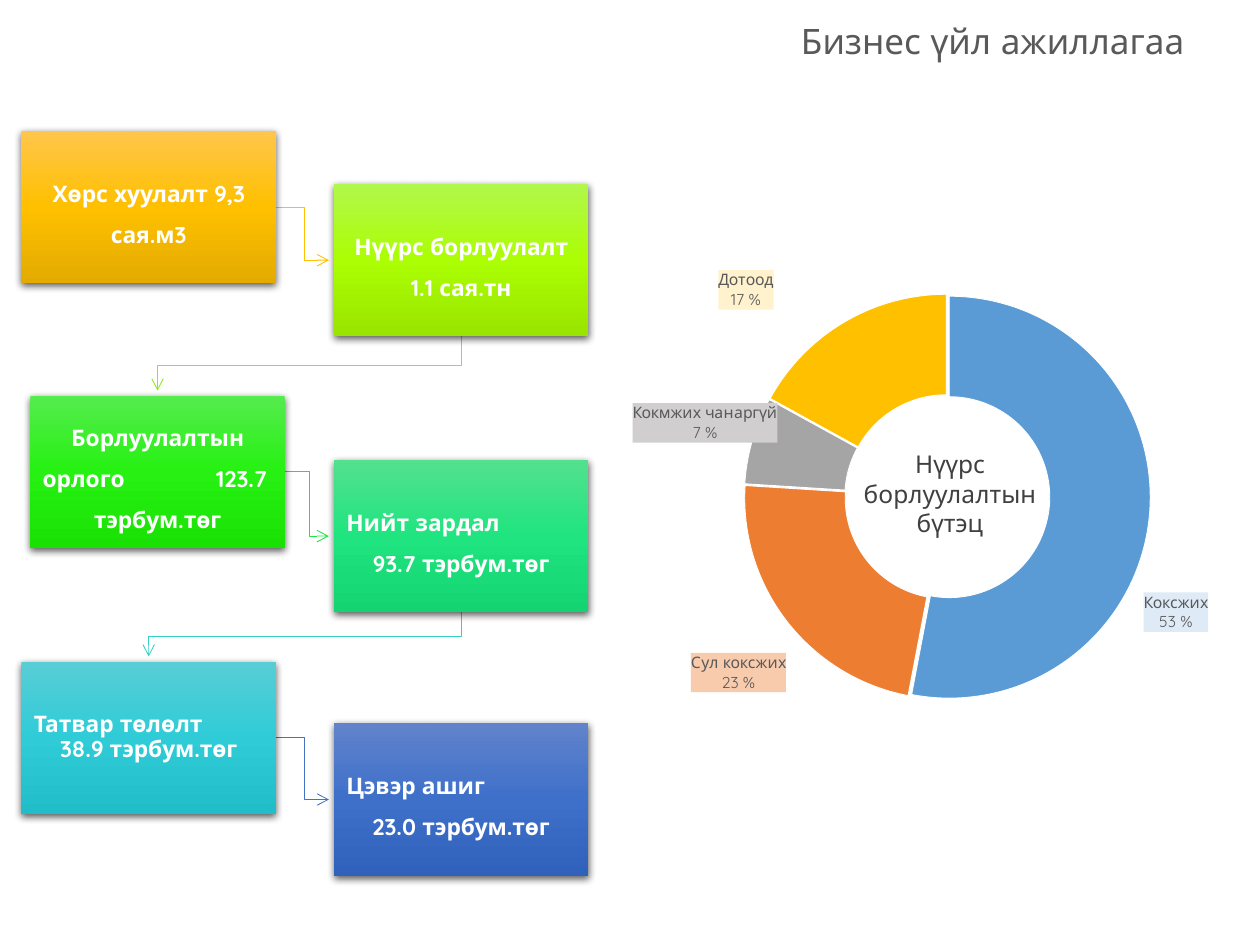
from copy import deepcopy

from lxml.etree import SubElement
from pptx import Presentation
from pptx.chart.data import CategoryChartData
from pptx.dml.color import RGBColor
from pptx.enum.chart import XL_CHART_TYPE as ChartType
from pptx.enum.shapes import MSO_SHAPE as Preset
from pptx.enum.text import MSO_ANCHOR as Anchor, PP_ALIGN as Align
from pptx.oxml import parse_xml
from pptx.oxml.ns import nsdecls, qn
from pptx.util import Inches, Pt

FONT = "Quicksand"
TITLE = "Бизнес үйл ажиллагаа"
RING_TITLE = "Нүүрс борлуулалтын бүтэц"
CARD_W, CARD_H = 2.02, 1.21
ARROW_GAP = 0.04

# left, top, gradient, line spacing, lines with their alignment
CARDS = [
    (0.17, 1.04, ("FFC64B", "FFC000", "E3AB00"), 1.5,
     [("Хөрс хуулалт 9,3 сая.м3", Align.CENTER)]),
    (2.65, 1.46, ("B1F74C", "ABFE03", "99E400"), 1.5,
     [("Нүүрс борлуулалт 1.1 сая.тн", Align.CENTER)]),
    (0.24, 3.14, ("55EC4E", "26F112", "19E104"), 1.5,
     [("Борлуулалтын", Align.CENTER), ("орлого\t123.7", Align.LEFT),
      ("тэрбум.төг", Align.CENTER)]),
    (2.65, 3.65, ("53E18E", "20E47F", "13D471"), 1.5,
     [("Нийт зардал", Align.LEFT), ("93.7 тэрбум.төг", Align.CENTER)]),
    (0.17, 5.25, ("59CDD6", "2FCCD7", "21BDC8"), 0.9,
     [("Татвар төлөлт", Align.LEFT), ("38.9 тэрбум.төг", Align.CENTER)]),
    (2.65, 5.74, ("6183CB", "3E70CA", "3062BB"), 1.5,
     [("Цэвэр ашиг", Align.LEFT), ("23.0 тэрбум.төг", Align.CENTER)]),
]
ARROW_COLORS = ["FFC000", "86F011", "23E148", "33D2C5", "4472C4"]

# category, percent, colour, label fill, label offset
SALES = [
    ("Коксжих", 53, "5B9BD5", "DEEBF7", (0.13, 0.16)),
    ("Сул коксжих", 23, "ED7D31", "F8CBAD", (-0.15, 0.13)),
    ("Кокмжих чанаргүй", 7, "A5A5A5", "D0CECE", (-0.17, -0.05)),
    ("Дотоод", 17, "FFC000", "FFF2CC", (-0.21, -0.12)),
]


def rgb(color):
    """Turn a hex string into a colour."""
    return RGBColor.from_string(color)


def style(paragraph, size, color, align, spacing=None, bold=False):
    """Format one paragraph."""
    font = paragraph.font
    font.name, font.size, font.bold = FONT, Pt(size), bold
    font.color.rgb = rgb(color)
    paragraph.alignment = align
    if spacing:
        paragraph.line_spacing = spacing


def add_title(slide):
    """Fill and place the title placeholder."""
    title = slide.shapes.title
    title.left, title.top, title.width, title.height = map(Inches, (5.75, 0.08, 3.75, 0.52))
    title.text_frame.text = TITLE
    title.text_frame.vertical_anchor = Anchor.MIDDLE
    style(title.text_frame.paragraphs[0], 20, "595959", Align.RIGHT, 0.9)


def manual_layout(x, y, size=None):
    """Build a chart layout element."""
    parts = [("x", x), ("y", y)]
    if size:
        parts = [("layoutTarget", "inner"), ("xMode", "edge"), ("yMode", "edge"),
                 *parts, ("w", size[0]), ("h", size[1])]
    layout = parse_xml(f"<c:layout {nsdecls('c')}><c:manualLayout/></c:layout>")
    for tag, value in parts:
        SubElement(layout[0], qn(f"c:{tag}")).set("val", str(value))
    return layout


def add_label(point, text, fill, offset):
    """Give a slice its label on a tinted ground."""
    frame = point.data_label.text_frame
    frame.text = text
    frame.word_wrap = False
    for paragraph in frame.paragraphs:
        style(paragraph, 9, "595959", Align.CENTER)
    label_text = frame.paragraphs[0]._p.getparent().getparent()
    label_text.addprevious(manual_layout(*offset))
    label_text.addnext(parse_xml(
        f"<c:spPr {nsdecls('c', 'a')}><a:solidFill><a:srgbClr val='{fill}'/>"
        "</a:solidFill><a:ln><a:noFill/></a:ln></c:spPr>"))


def add_sales_ring(slide):
    """Draw the doughnut of coal sales with its centre title."""
    data = CategoryChartData()
    data.categories = [sale[0] for sale in SALES]
    data.add_series(RING_TITLE, [sale[1] for sale in SALES])
    box = map(Inches, (5.02, 1.17, 4.67, 5))
    chart = slide.shapes.add_chart(ChartType.DOUGHNUT, *box, data).chart
    chart.has_legend = chart.has_title = False
    chart.font.name, chart.font.size = "Calibri", Pt(10)
    chart.font.color.rgb = rgb("000000")
    plot = chart.plots[0]
    plot.vary_by_categories = True
    series = plot.series[0]
    for index, (category, percent, color, fill, offset) in enumerate(SALES):
        point = series.points[index]
        point.format.fill.solid()
        point.format.fill.fore_color.rgb = rgb(color)
        point.format.line.color.rgb = rgb("FFFFFF")
        point.format.line.width = Pt(0.5)
        add_label(point, f"{category}\n{percent} %", fill, offset)
    first_point = series._element.find(qn("c:dPt"))
    first_point.addprevious(parse_xml(f"<c:explosion {nsdecls('c')} val='2'/>"))
    ring = plot._element
    for leader in ring.iter(qn("c:showLeaderLines")):
        leader.set("val", "0")
    ring.find(qn("c:holeSize")).set("val", "53")
    area = ring.getparent()
    for old in area.findall(qn("c:layout")):
        area.remove(old)
    area.insert(0, manual_layout(0.19, 0.22, (0.69, 0.67)))

    center = slide.shapes.add_shape(Preset.OVAL, *map(Inches, (6.33, 2.67, 2.42, 2.49)))
    center.shadow.inherit = False
    center.fill.background()
    center.line.fill.background()
    center.text_frame.word_wrap = True
    center.text_frame.text = RING_TITLE
    center.text_frame.vertical_anchor = Anchor.MIDDLE
    style(center.text_frame.paragraphs[0], 14, "404040", Align.CENTER)


def add_card(slide, left, top, gradient, spacing, lines):
    """Draw one step with its gradient, shadow and text."""
    card = slide.shapes.add_shape(Preset.RECTANGLE, *map(Inches, (left, top, CARD_W, CARD_H)))
    card.fill.gradient()
    card.fill.gradient_angle = 270
    stops = card._element.spPr.find(qn("a:gradFill")).find(qn("a:gsLst"))
    stops.append(deepcopy(stops[0]))
    for stop, color, position in zip(card.fill.gradient_stops, gradient, (0, 0.5, 1)):
        stop.color.rgb, stop.position = rgb(color), position
    card.line.fill.background()
    card.shadow.inherit = False
    card._element.spPr.find(qn("a:effectLst")).append(parse_xml(
        f"<a:outerShdw {nsdecls('a')} blurRad='57150' dist='19050' dir='5400000' "
        "algn='ctr' rotWithShape='0'><a:srgbClr val='000000'>"
        "<a:alpha val='63000'/></a:srgbClr></a:outerShdw>"))
    frame = card.text_frame
    frame.word_wrap = True
    frame.vertical_anchor = Anchor.MIDDLE
    frame.margin_left = frame.margin_right = Inches(0.1)
    frame.margin_top = frame.margin_bottom = Inches(0.1)
    frame.text = "\n".join(text for text, _ in lines)
    for paragraph, (text, align) in zip(frame.paragraphs, lines):
        if "\t" in text:
            tabs = SubElement(paragraph._p.get_or_add_pPr(), qn("a:tabLst"))
            SubElement(tabs, qn("a:tab"), pos=str(Inches(1.78)), algn="r")
        style(paragraph, 13, "FFFFFF", align, spacing, True)


def add_arrow(slide, start, end, color):
    """Draw a bent arrow between two consecutive cards."""
    (x1, y1), (x2, y2) = start[:2], end[:2]
    if x2 > x1:
        begin, tip = (x1 + CARD_W, y1 + CARD_H / 2), (x2 - ARROW_GAP, y2 + CARD_H / 2)
        middle = (x1 + CARD_W + x2) / 2
        bends = [(middle, begin[1]), (middle, tip[1])]
    else:
        begin, tip = (x1 + CARD_W / 2, y1 + CARD_H), (x2 + CARD_W / 2, y2 - ARROW_GAP)
        middle = (y1 + CARD_H + y2) / 2
        bends = [(begin[0], middle), (tip[0], middle)]
    corners = [tuple(map(Inches, corner)) for corner in (begin, *bends, tip)]
    builder = slide.shapes.build_freeform(*corners[0])
    builder.add_line_segments(corners[1:], close=False)
    arrow = builder.convert_to_shape()
    arrow.shadow.inherit = False
    arrow.fill.background()
    arrow.line.color.rgb = rgb(color)
    arrow.line.width = Pt(0.5)
    SubElement(arrow.line._get_or_add_ln(), qn("a:tailEnd"), type="arrow")


def main():
    """Build the slide and save it."""
    deck = Presentation()
    deck.slide_width, deck.slide_height = Inches(10), Inches(7.5)
    slide = deck.slides.add_slide(deck.slide_layouts[5])
    add_title(slide)
    add_sales_ring(slide)
    for start, end, color in zip(CARDS, CARDS[1:], ARROW_COLORS):
        add_arrow(slide, start, end, color)
    for card in CARDS:
        add_card(slide, *card)
    deck.save("out.pptx")


if __name__ == "__main__":
    main()
